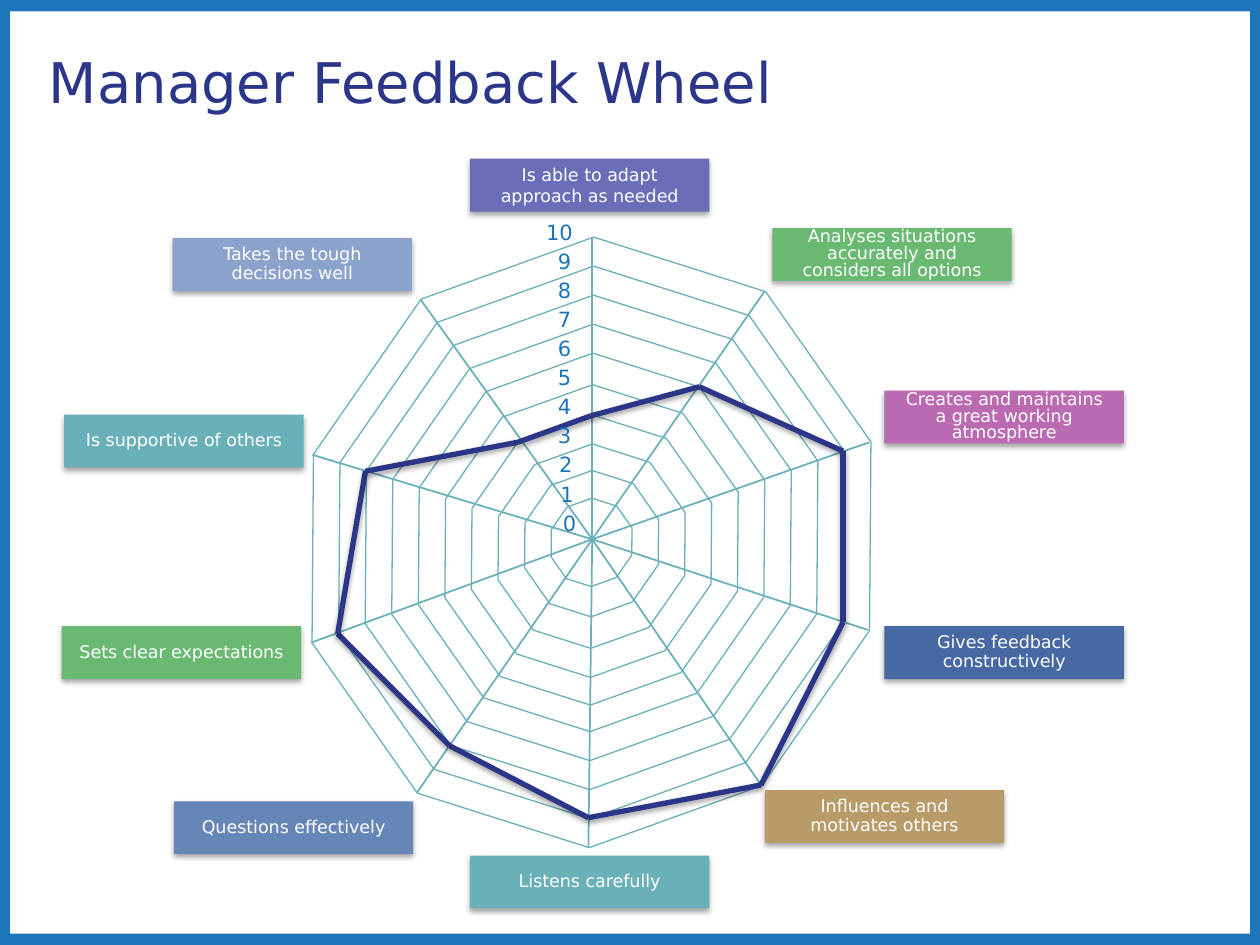
import itertools

import pptx
import pptx.dml.color
import pptx.enum.shapes
import pptx.enum.text
import pptx.oxml
import pptx.oxml.ns
import pptx.util
from lxml import etree

RGBColor = pptx.dml.color.RGBColor
MSO_SHAPE = pptx.enum.shapes.MSO_SHAPE
PP_ALIGN = pptx.enum.text.PP_ALIGN
MSO_ANCHOR = pptx.enum.text.MSO_ANCHOR

FONT = "DejaVu Sans"
WHITE = RGBColor(0xFF, 0xFF, 0xFF)
BLUE = RGBColor(0x1C, 0x75, 0xBB)
NAVY = RGBColor(0x2C, 0x36, 0x88)
TEAL = RGBColor(0x6A, 0xB0, 0xB9)
VIOLET = RGBColor(0x6A, 0x6E, 0xB9)
GREEN = RGBColor(0x6A, 0xB9, 0x73)
MAGENTA = RGBColor(0xB9, 0x6A, 0xB0)
DEEP_BLUE = RGBColor(0x47, 0x68, 0xA2)
SAND = RGBColor(0xB9, 0x9B, 0x6A)
STEEL = RGBColor(0x67, 0x86, 0xB8)
LIGHT_STEEL = RGBColor(0x8B, 0xA3, 0xCC)

# Grid of 100 columns by 75 rows; every length below is in grid cells
WIDTH = pptx.util.Inches(10)
HEIGHT = pptx.util.Inches(7.5)
COLUMN = WIDTH / 100
ROW = HEIGHT / 75

HUB = (47, 42.8)
RING_LEFT, RING_SIZE, RING_GAP = 23.8, 46.3, 2.2
RING_TOPS = (19.9, 22.1, 24.3, 26.5, 28.7, 31.1, 33.4, 35.6, 37.6, 39.7)
RING_ROTATION = 17.6
SPOKE_ENDS = (
    (47, 18.8), (60.7, 23.1), (69, 35.1), (68.9, 50), (60.4, 62.3),
    (46.7, 67.3), (33.1, 62.9), (24.7, 51), (24.8, 36.1), (33.4, 23.8),
)
SCORE_POINTS = (
    (46.9, 33), (55.5, 30.7), (66.9, 35.8), (66.9, 49.4), (60.4, 62.3),
    (46.7, 64.9), (35.7, 59.2), (26.8, 50.3), (29, 37.4), (41.1, 35.1),
)
SCALE_LEFTS = (42.3,) + (42.7,) * 7 + (42.8, 42.9, 43.1)
SCALE_TOP, SCALE_BOTTOM = 16.9, 40

# Left, top, fill, line spacing, wording
LABELS = (
    (37.3, 12.6, VIOLET, 1, "Is able to adapt\vapproach as needed"),
    (61.3, 18.1, GREEN, 0.8,
     "Analyses situations accurately and considers all options"),
    (70.2, 31, MAGENTA, 0.8,
     "Creates and maintains\va great working atmosphere"),
    (70.2, 49.7, DEEP_BLUE, 0.9, "Gives feedback\vconstructively"),
    (60.7, 62.7, SAND, 0.9, "Influences and motivates others"),
    (37.3, 67.9, TEAL, 0.9, "Listens carefully"),
    (13.8, 63.6, STEEL, 0.9, "Questions effectively"),
    (4.9, 49.7, GREEN, 0.9, "Sets clear expectations"),
    (5.1, 32.9, TEAL, 0.9, "Is supportive of others"),
    (13.7, 18.9, LIGHT_STEEL, 0.9, "Takes the tough\vdecisions well"),
)


def place(left, top, width, height):
    return (round(left * COLUMN), round(top * ROW),
            round(width * COLUMN), round(height * ROW))


def add_shadow(effects, opacity, distance):
    shadow = etree.SubElement(
        effects, pptx.oxml.ns.qn("a:outerShdw"), blurRad="40000",
        dist=str(distance), dir="5400000", rotWithShape="0")
    color = etree.SubElement(shadow, pptx.oxml.ns.qn("a:srgbClr"), val="000000")
    etree.SubElement(color, pptx.oxml.ns.qn("a:alpha"), val=str(opacity * 1000))


def add_line(slide, start, end, color, weight):
    """Draw a straight line and return its empty effect list."""
    line = slide.shapes.add_connector(
        pptx.enum.shapes.MSO_CONNECTOR.STRAIGHT,
        round(start[0] * COLUMN), round(start[1] * ROW),
        round(end[0] * COLUMN), round(end[1] * ROW))
    line.line.color.rgb = color
    line.line.width = pptx.util.Pt(weight)
    return etree.SubElement(line._element.spPr, pptx.oxml.ns.qn("a:effectLst"))


def add_box(slide, left, top, width, height, fill):
    box = slide.shapes.add_shape(
        MSO_SHAPE.RECTANGLE, *place(left, top, width, height))
    box.fill.solid()
    box.fill.fore_color.rgb = fill
    box.line.fill.background()
    box.shadow.inherit = False
    return box


def write(shape, text, size, color, alignment=PP_ALIGN.CENTER, spacing=1):
    frame = shape.text_frame
    frame.word_wrap = True
    frame.text = text
    paragraph = frame.paragraphs[0]
    paragraph.alignment = alignment
    paragraph.line_spacing = spacing
    paragraph.font.name = FONT
    paragraph.font.size = pptx.util.Pt(size)
    paragraph.font.color.rgb = color
    return frame


def add_ring(slide, index, top):
    size = RING_SIZE - 2 * RING_GAP * index
    ring = slide.shapes.add_shape(
        MSO_SHAPE.DECAGON,
        *place(RING_LEFT + RING_GAP * index, top, size, size))
    ring.rotation = RING_ROTATION
    ring.fill.background()
    ring.line.color.rgb = TEAL
    ring.line.width = pptx.util.Pt(0.75)
    ring.shadow.inherit = False


def add_label(slide, left, top, fill, spacing, text):
    label = add_box(slide, left, top, 19, 4.2, fill)
    add_shadow(label._element.spPr.find(pptx.oxml.ns.qn("a:effectLst")),
               35, 23000)
    frame = write(label, text, 10, WHITE, spacing=spacing)
    frame.margin_top = frame.margin_bottom = 0
    frame.vertical_anchor = MSO_ANCHOR.MIDDLE


def main():
    presentation = pptx.Presentation()
    presentation.slide_width = WIDTH
    presentation.slide_height = HEIGHT
    slide = presentation.slides.add_slide(presentation.slide_layouts[6])

    # Blue frame around a white page
    slide.background.fill.solid()
    slide.background.fill.fore_color.rgb = BLUE
    add_box(slide, 0.8, 0.9, 98.4, 73.2, WHITE)

    # Title
    title = slide.shapes.add_textbox(*place(2.9, 0.2, 94.8, 12.5))
    frame = write(title, "Manager Feedback Wheel", 32, NAVY, PP_ALIGN.LEFT)
    frame.vertical_anchor = MSO_ANCHOR.MIDDLE

    # Wheel: rings and spokes
    for index, top in enumerate(RING_TOPS):
        add_ring(slide, index, top)
    for end in SPOKE_ENDS:
        add_line(slide, HUB, end, TEAL, 1)

    # Score outline
    for start, end in itertools.pairwise(SCORE_POINTS + SCORE_POINTS[:1]):
        add_shadow(add_line(slide, start, end, NAVY, 3), 38, 20000)

    # Scale from 10 down to 0
    step = (SCALE_BOTTOM - SCALE_TOP) / 10
    for index, left in enumerate(SCALE_LEFTS):
        number = slide.shapes.add_textbox(
            *place(left, SCALE_TOP + step * index, 4.2, 3))
        write(number, str(10 - index), 12, BLUE)

    # Labels around the wheel
    for label in LABELS:
        add_label(slide, *label)

    presentation.save("out.pptx")


if __name__ == "__main__":
    main()
